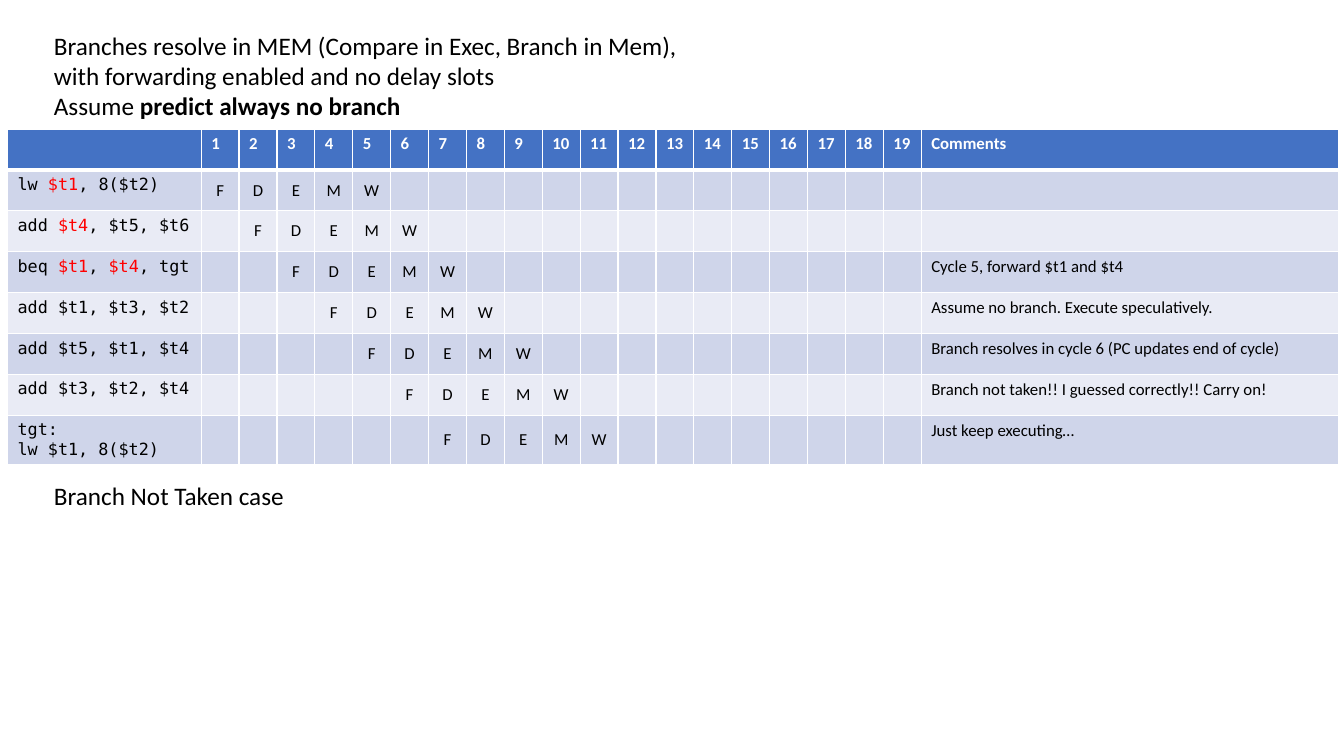
from lxml import etree
from pptx import Presentation
from pptx.dml.color import RGBColor
from pptx.enum import text
from pptx.oxml import ns
from pptx.util import Cm, Pt

BLACK = RGBColor(0x00, 0x00, 0x00)
WHITE = RGBColor(0xFF, 0xFF, 0xFF)
RED = RGBColor(0xFF, 0x00, 0x00)
HEADER = RGBColor(0x44, 0x72, 0xC4)
BANDS = [RGBColor(0xE9, 0xEB, 0xF5), RGBColor(0xCF, 0xD5, 0xEA)]

SANS, MONO = "Calibri", "DejaVu Sans Mono"
STAGES = "FDEMW"
CYCLES = 19

# Instruction as alternating plain and highlighted parts, then its comment
PIPELINE = [
    (["lw ", "$t1", ", 8($t2)"], ""),
    (["add ", "$t4", ", $t5, $t6"], ""),
    (["beq ", "$t1", ", ", "$t4", ", tgt"], "Cycle 5, forward $t1 and $t4"),
    (["add $t1, $t3, $t2"], "Assume no branch. Execute speculatively."),
    (["add $t5, $t1, $t4"], "Branch resolves in cycle 6 (PC updates end of cycle)"),
    (["add $t3, $t2, $t4"], "Branch not taken!! I guessed correctly!! Carry on!"),
    (["tgt: \vlw $t1, 8($t2)"], "Just keep executing…"),
]


def write(p, parts, size=12, font=SANS, color=BLACK, bold=False):
    """Fill a paragraph with runs of one format; a vertical tab breaks the line."""
    p.text = parts[0]
    for part in parts[1:]:
        p.add_run().text = part
    for r in p.runs:
        r.font.size, r.font.name = Pt(size), font
        r.font.color.rgb, r.font.bold = color, bold


def add_label(slide, left, top, width, height, parts):
    sp = slide.shapes.add_textbox(left, top, width, height)
    tf = sp.text_frame
    tf.word_wrap = False
    tf.auto_size = text.MSO_AUTO_SIZE.SHAPE_TO_FIT_TEXT
    write(tf.paragraphs[0], parts, size=18)
    return tf.paragraphs[0]


def style_cell(cell, fill, top=1, bottom=1):
    """White borders with widths in points, and a solid fill."""
    tc_pr = cell._tc.get_or_add_tcPr()
    for side, width in (("L", 1), ("R", 1), ("T", top), ("B", bottom)):
        ln = etree.SubElement(tc_pr, ns.qn(f"a:ln{side}"), w=str(Pt(width)))
        solid = etree.SubElement(ln, ns.qn("a:solidFill"))
        etree.SubElement(solid, ns.qn("a:srgbClr"), val=str(WHITE))
    cell.fill.solid()
    cell.fill.fore_color.rgb = fill


def fill_header(table):
    titles = [""] + [str(n + 1) for n in range(CYCLES)] + ["Comments"]
    for col, title in enumerate(titles):
        cell = table.cell(0, col)
        style_cell(cell, HEADER, bottom=3)
        write(cell.text_frame.paragraphs[0], [title], color=WHITE, bold=True)


def fill_instruction(table, row, parts, comment):
    for cell in table.rows[row].cells:
        style_cell(cell, BANDS[row % 2], top=3 if row == 1 else 1)

    p = table.cell(row, 0).text_frame.paragraphs[0]
    write(p, parts, font=MONO)
    if "\v" not in parts[0]:
        p.space_before = Pt(2.4)
    for r in p.runs:
        if r.text.startswith("$"):
            r.font.color.rgb = RED

    # Each instruction enters the pipeline one cycle after the one before
    for col, stage in enumerate(STAGES, start=row):
        cell = table.cell(row, col)
        cell.vertical_anchor = text.MSO_ANCHOR.MIDDLE
        p = cell.text_frame.paragraphs[0]
        write(p, [stage])
        p.alignment = text.PP_ALIGN.CENTER

    if comment:
        write(table.cell(row, CYCLES + 1).text_frame.paragraphs[0], [comment])


def add_pipeline(slide):
    widths = [Cm(4.88)] + [Cm(18.15) // CYCLES] * CYCLES + [Cm(10.52)]
    row_height = Cm(1.03)
    row_count = len(PIPELINE) + 1
    table = slide.shapes.add_table(row_count, len(widths), Cm(0.19), Cm(3.25),
                                   sum(widths), row_height * row_count).table
    for column, width in zip(table.columns, widths):
        column.width = width
    fill_header(table)
    for row, (parts, comment) in enumerate(PIPELINE, start=1):
        fill_instruction(table, row, parts, comment)


def main():
    prs = Presentation()
    prs.slide_width, prs.slide_height = Cm(33.87), Cm(19.05)
    slide = prs.slides.add_slide(prs.slide_layouts[6])

    # Pipeline diagram
    add_pipeline(slide)

    # Assumptions above the table
    p = add_label(slide, Cm(1.11), Cm(0.64), Cm(16.54), Cm(2.57), [
        "Branches resolve in MEM (Compare in Exec, Branch in Mem), \v"
        "with forwarding enabled and no delay slots\vAssume ",
        "predict always no branch"])
    p.runs[-1].font.bold = True

    # Case name below the table
    add_label(slide, Cm(1.11), Cm(11.99), Cm(6.38), Cm(1.02),
              ["Branch Not Taken case"])

    prs.save("out.pptx")


if __name__ == "__main__":
    main()
